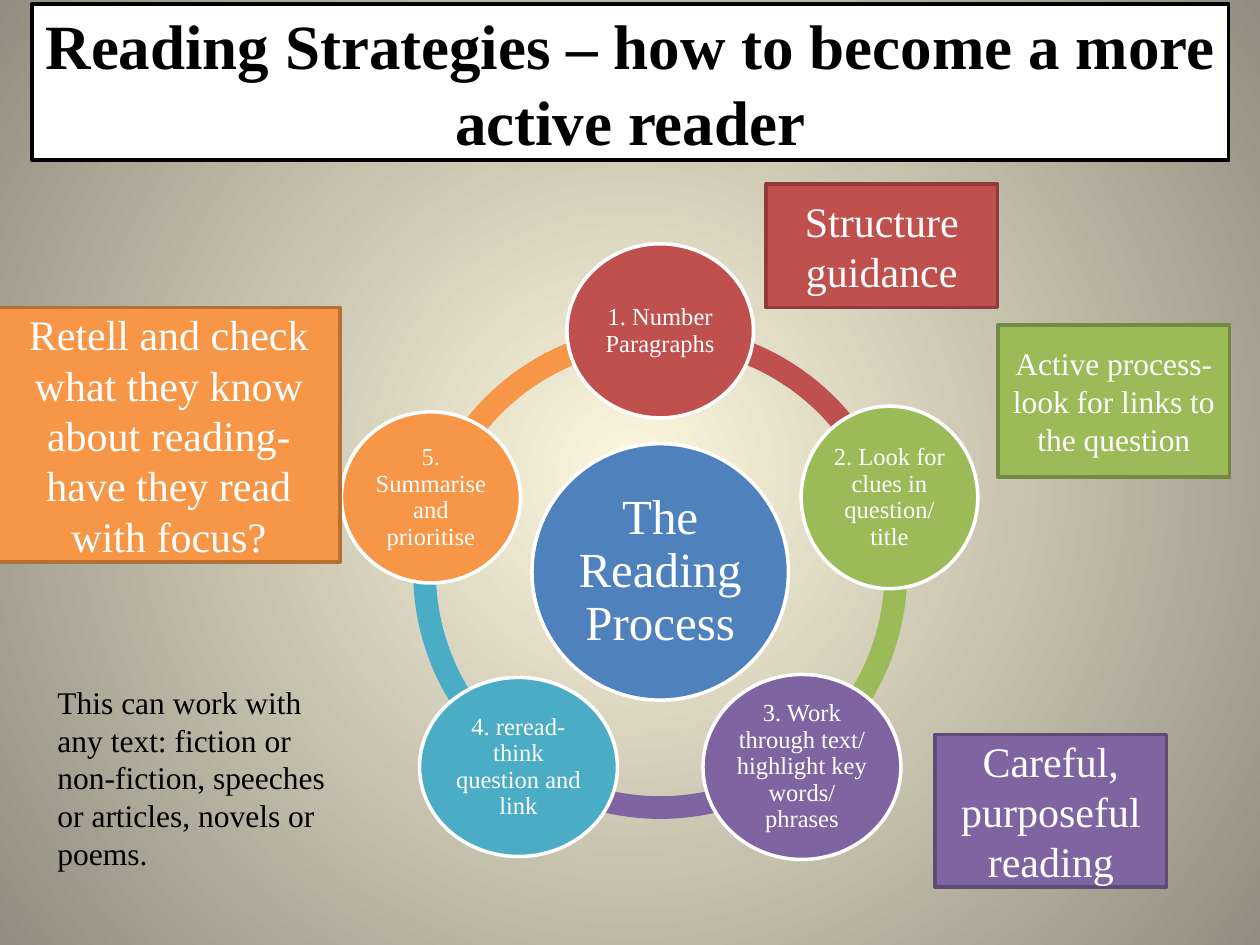
from dataclasses import dataclass
from math import cos, radians, sin

from pptx import Presentation
from pptx.dml.color import RGBColor
from pptx.enum.shapes import MSO_SHAPE as Shape
from pptx.enum.text import MSO_ANCHOR as Anchor, PP_ALIGN as Align
from pptx.oxml.ns import qn
from pptx.util import Cm, Pt
from lxml.etree import SubElement

FONT = "Times New Roman"
WHITE, BLACK, BLUE = "FFFFFF", "000000", "4F81BD"
RED, GREEN, PURPLE = "C0504D", "9BBB59", "8064A2"
TEAL, ORANGE = "4BACC6", "F79646"

# Cycle geometry in cm and degrees
CENTRE_X, CENTRE_Y = 13.31, 11.53
RING_SIZE, ORBIT = 9.96, 4.86
RING_THICKNESS = 0.046
FIRST_ANGLE, STEP_ANGLE = 270, 72


@dataclass
class Step:
    text: str
    color: str
    width: float
    height: float


@dataclass
class Callout:
    text: str
    color: str
    border: str
    size: int
    left: float
    top: float
    width: float
    height: float


STEPS = [
    Step("1. Number Paragraphs", RED, 3.76, 3.51),
    Step("2. Look for clues in question/ title", GREEN, 3.56, 3.68),
    Step("3. Work through text/ highlight key words/ phrases", PURPLE, 3.99, 3.73),
    Step("4. reread- think question and link", TEAL, 3.99, 3.61),
    Step("5. Summarise and prioritise", ORANGE, 3.61, 3.45),
]

CALLOUTS = [
    Callout("Structure guidance", RED, "8E3B39", 24, 15.44, 3.71, 4.67, 2.49),
    Callout("Active process- look for links to the question",
            GREEN, "738A42", 18, 20.12, 6.55, 4.67, 3.07),
    Callout("Careful, purposeful reading", PURPLE, "5F4A78", 24, 18.85, 14.81, 4.67, 3.07),
    Callout("Retell and check what they know about reading- have they read with focus?",
            ORANGE, "B76F34", 24, -0.05, 6.2, 6.91, 5.13),
]


def rgb(color: str) -> RGBColor:
    return RGBColor.from_string(color)


def paint(sp, fill: str, border: str | None = None) -> None:
    sp.fill.solid()
    sp.fill.fore_color.rgb = rgb(fill)
    if border:
        sp.line.color.rgb = rgb(border)
        sp.line.width = Pt(2)
    else:
        sp.line.fill.background()


def write(sp, text: str, size: int, color: str = WHITE, align=Align.CENTER,
          anchor=Anchor.MIDDLE, bold: bool = False):
    tf = sp.text_frame
    tf.word_wrap = True
    tf.vertical_anchor = anchor
    p = tf.paragraphs[0]
    p.alignment = align
    r = p.add_run()
    r.text = text
    r.font.name, r.font.size, r.font.bold = FONT, Pt(size), bold
    r.font.color.rgb = rgb(color)
    return tf


def add_shape(slide, kind, left: float, top: float, width: float, height: float,
              fill: str, border: str | None = None):
    sp = slide.shapes.add_shape(kind, Cm(left), Cm(top), Cm(width), Cm(height))
    sp.shadow.inherit = False
    paint(sp, fill, border)
    return sp


def add_circle(slide, x: float, y: float, width: float, height: float,
               color: str, text: str, size: int, inset: float) -> None:
    sp = add_shape(slide, Shape.OVAL, x - width / 2, y - height / 2,
                   width, height, color, WHITE)
    tf = write(sp, text, size)
    tf.margin_left = tf.margin_right = tf.margin_top = tf.margin_bottom = Cm(inset)
    tf.paragraphs[0].line_spacing = 0.9


def add_arc(slide, start: float, color: str) -> None:
    sp = add_shape(slide, Shape.BLOCK_ARC, CENTRE_X - RING_SIZE / 2,
                   CENTRE_Y - RING_SIZE / 2, RING_SIZE, RING_SIZE, color)
    # Angles are stored in 60000ths of a degree, adjustments in 100000ths
    sp.adjustments[0] = start % 360 * 0.6
    sp.adjustments[1] = (start + STEP_ANGLE) % 360 * 0.6
    sp.adjustments[2] = RING_THICKNESS


def set_background(slide, inner: str, outer: str) -> None:
    fill = slide.background.fill
    fill.gradient()
    for stop, color, position in zip(fill.gradient_stops, (inner, outer), (0, 1)):
        stop.color.rgb = rgb(color)
        stop.position = position
    # Turn the linear gradient into a circular one
    lin = next(slide.element.iter(qn("a:lin")))
    grad = lin.getparent()
    grad.remove(lin)
    circle = SubElement(grad, qn("a:path"), {"path": "circle"})
    SubElement(circle, qn("a:fillToRect"), {side: "50000" for side in "ltrb"})


def main() -> None:
    prs = Presentation()
    prs.slide_width, prs.slide_height = Cm(25.4), Cm(19.05)
    slide = prs.slides.add_slide(prs.slide_layouts[5])
    set_background(slide, "FCF7DD", "918E81")

    # Title
    title = slide.shapes.title
    title.left, title.top, title.width, title.height = Cm(0.64), Cm(0.08), Cm(24.13), Cm(3.15)
    paint(title, WHITE, BLACK)
    write(title, "Reading Strategies – how to become a more active reader",
          36, BLACK, bold=True)

    # Cycle: ring, hub, then the steps on the ring
    angles = [FIRST_ANGLE + STEP_ANGLE * i for i in range(len(STEPS))]
    for angle, step in zip(angles, STEPS):
        add_arc(slide, angle, step.color)
    add_circle(slide, CENTRE_X, CENTRE_Y, 5.17, 5.17, BLUE, "The Reading Process", 28, 0.1)
    for angle, step in zip(angles, STEPS):
        add_circle(slide, CENTRE_X + ORBIT * cos(radians(angle)),
                   CENTRE_Y + ORBIT * sin(radians(angle)),
                   step.width, step.height, step.color, step.text, 14, 0.05)

    # Callouts
    for c in CALLOUTS:
        sp = add_shape(slide, Shape.RECTANGLE, c.left, c.top, c.width, c.height,
                       c.color, c.border)
        write(sp, c.text, c.size)

    # Note
    note = slide.shapes.add_textbox(Cm(0.91), Cm(13.64), Cm(5.92), Cm(4.11))
    write(note, "This can work with any text: fiction or non-fiction, speeches or "
          "articles, novels or poems.", 18, BLACK, Align.LEFT, Anchor.TOP)

    prs.save("out.pptx")


if __name__ == "__main__":
    main()
